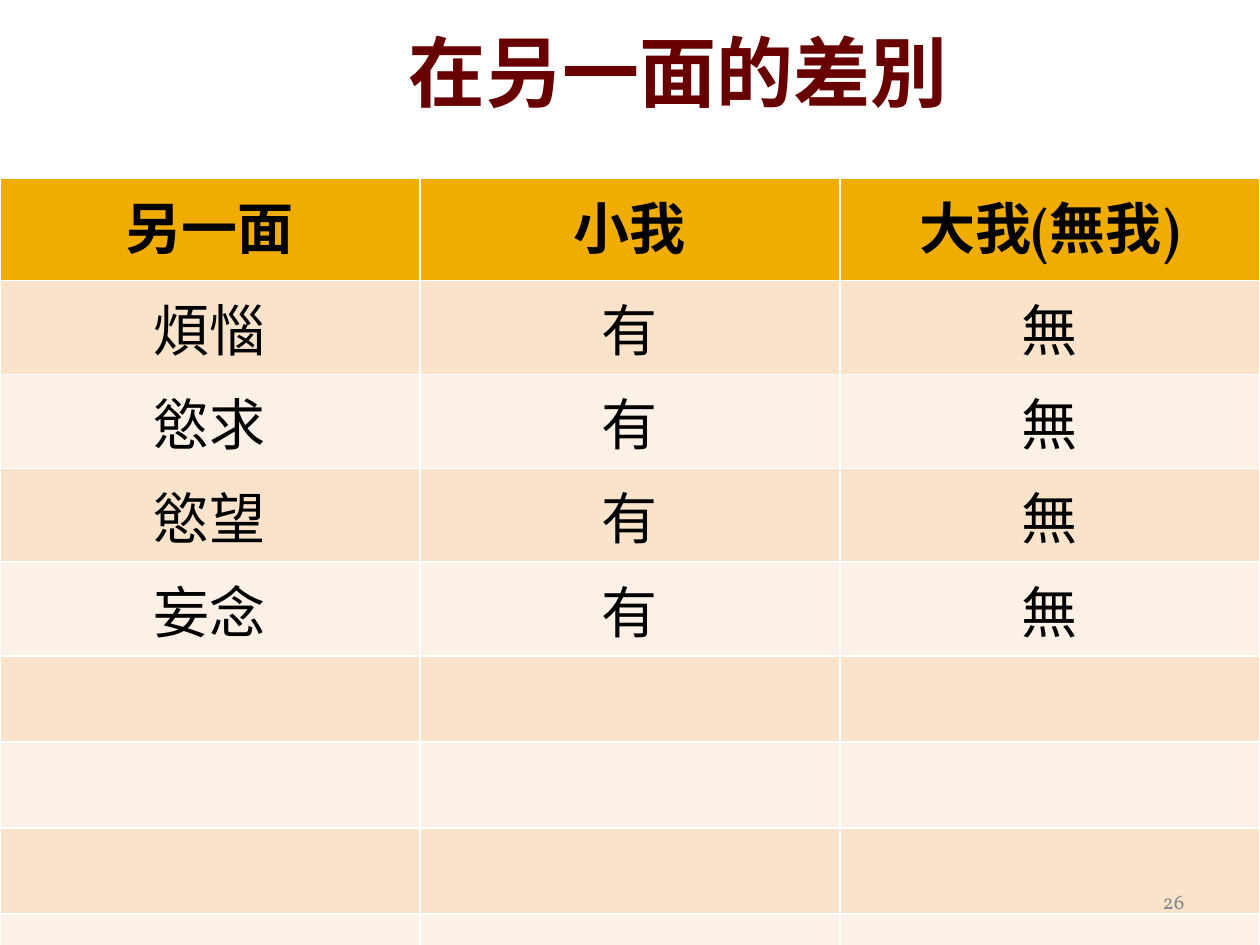
from dataclasses import dataclass

from pptx import Presentation
from pptx.dml.color import RGBColor
from pptx.enum.text import MSO_ANCHOR, PP_ALIGN
from pptx.util import Pt

PX = 914400 // 126


@dataclass(frozen=True)
class Theme:
    head: str = "Courier New"
    body: str = "Vollkorn"
    maroon: str = "680000"
    black: str = "000000"
    grey: str = "898989"
    gold: str = "F0AD00"
    bands: tuple = ("F9E3CB", "FCF1E7")
    title: int = 44
    cell: int = 32
    note: int = 12


THEME = Theme()
COLS = [420, 420, 420]
HEIGHTS = [97] + [86] * 7 + [69]
ROWS = [("另一面", "小我", "大我(無我)")] + [
    (name, "有", "無") for name in ("煩惱", "慾求", "慾望", "妄念")
]


def px(*sizes):
    return [size * PX for size in sizes]


def write(frame, text, font, size, color, bold=False, align=PP_ALIGN.CENTER):
    para = frame.paragraphs[0]
    para.text = text
    para.alignment = align
    para.font.name = font
    para.font.size = Pt(size)
    para.font.bold = bold
    para.font.color.rgb = RGBColor.from_string(color)


def add_title(slide, text):
    title = slide.shapes.title
    title.left, title.top, title.width, title.height = px(302, 0, 753, 141)
    title.text_frame.vertical_anchor = MSO_ANCHOR.MIDDLE
    write(title.text_frame, text, THEME.head, THEME.title, THEME.maroon, True)


def add_grid(slide):
    """Add the table; rows beyond ROWS stay empty."""
    box = px(0, 178, sum(COLS), sum(HEIGHTS))
    table = slide.shapes.add_table(len(HEIGHTS), len(COLS), *box).table
    for col, width in zip(table.columns, px(*COLS)):
        col.width = width
    for i, (row, height) in enumerate(zip(table.rows, px(*HEIGHTS))):
        row.height = height
        color = THEME.bands[(i - 1) % 2] if i else THEME.gold
        for cell in row.cells:
            cell.fill.solid()
            cell.fill.fore_color.rgb = RGBColor.from_string(color)
    for i, words in enumerate(ROWS):
        for cell, word in zip(table.rows[i].cells, words):
            write(cell.text_frame, word, THEME.body, THEME.cell,
                  THEME.black, i == 0)


def add_number(slide, text):
    frame = slide.shapes.add_textbox(*px(903, 876, 294, 50)).text_frame
    frame.word_wrap = True
    frame.vertical_anchor = MSO_ANCHOR.MIDDLE
    write(frame, text, THEME.body, THEME.note, THEME.grey,
          align=PP_ALIGN.RIGHT)


def main():
    deck = Presentation()
    deck.slide_width, deck.slide_height = px(1260, 945)
    slide = deck.slides.add_slide(deck.slide_layouts[5])
    add_title(slide, "在叧一面的差別")
    add_grid(slide)
    add_number(slide, "26")
    deck.save("out.pptx")


if __name__ == "__main__":
    main()
